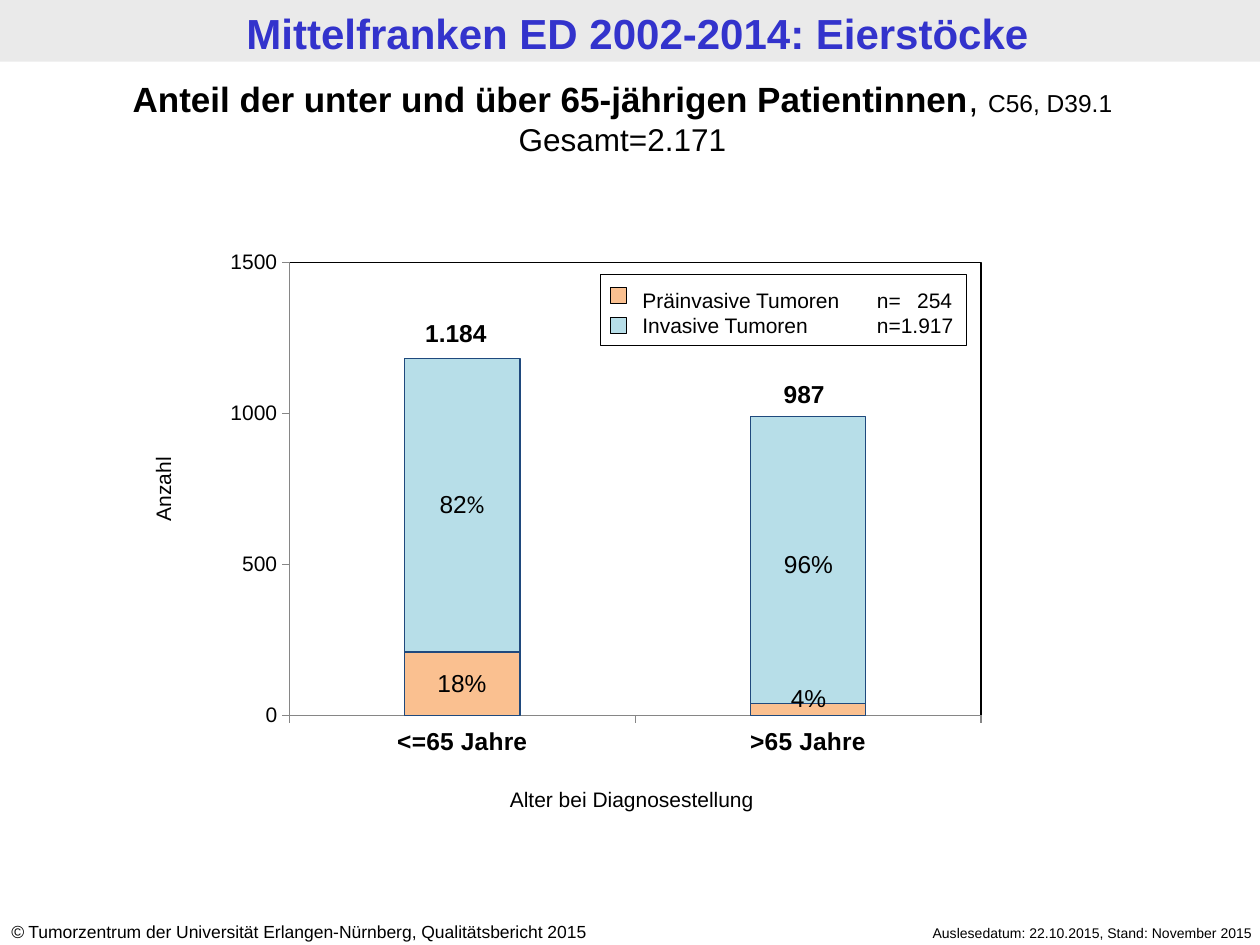
from lxml.etree import SubElement
from pptx import Presentation
from pptx.chart.data import CategoryChartData
from pptx.dml.color import RGBColor
from pptx.enum.chart import XL_CHART_TYPE as ChartType, XL_TICK_MARK as Tick
from pptx.enum.shapes import MSO_SHAPE as Shape
from pptx.enum.text import PP_ALIGN as Align
from pptx.oxml import parse_xml
from pptx.oxml.ns import nsdecls, qn
from pptx.util import Pt

# Content
BLACK, BAND, TITLE_BLUE = "000000", "EAEAEA", "3333CC"
OUTLINE, AXIS_GREY = "1F497D", "868686"
AGE_GROUPS = ["<=65 Jahre", ">65 Jahre"]
TUMORS = [  # name, cases per age group, colour, legend count
    ("Präinvasive Tumoren", (210, 40), "FAC090", "254"),
    ("Invasive Tumoren", (970, 950), "B7DEE8", "1.917"),
]
TITLE = "Mittelfranken ED 2002-2014: Eierstöcke"
SUBTITLE = [
    [("Anteil der unter und über 65-jährigen Patientinnen", {"size": Pt(20), "bold": True}),
     (", ", {"size": Pt(20)}), ("C56, D39.1", {"size": Pt(14)})],
    [("Gesamt=2.171", {"size": Pt(18)})],
]
COPYRIGHT = [[("©", {"italic": True}),
              (" Tumorzentrum der Universität Erlangen-Nürnberg, Qualitätsbericht 2015", {})]]
DATES = "Auslesedatum: 22.10.2015, Stand: November 2015"
TOTALS = [("1.184", (224, 178, 73, 24)), ("987", (423, 213, 73, 24))]
SHARES = [
    ([[("82", {}), ("%", {"name": "Calibri"})]], (230, 276, 68, 24)),
    ("18%", (230, 378, 68, 24)),
    ("96%", (428, 310, 68, 24)),
    ("4%", (428, 387, 68, 24)),
]
AXIS_TITLES = [("Alter bei Diagnosestellung", (241, 446, 240, 22), 0),
               ("Anzahl", (-0.7, 268.5, 188, 22), 270)]
CHART_BOX = (108.7, 102.2, 502.6, 335.5)
PLOT = {"x": 0.113, "y": 0.142, "w": 0.786, "h": 0.772}
LEGEND_BOX = (343, 156.8, 209.5, 40.5)
LEGEND_TABS = [(134, "l"), (177, "r")]

prs = Presentation()
prs.slide_width, prs.slide_height = Pt(720), Pt(540)
slide = prs.slides.add_slide(prs.slide_layouts[6])


def rgb(color):
    return RGBColor.from_string(color)


def add_text(content, box, size=14, align=Align.CENTER, bold=False, color=BLACK,
             rotation=0, tabs=()):
    """Content is one string or a list of paragraphs made of (text, font settings)."""
    textbox = slide.shapes.add_textbox(*map(Pt, box))
    textbox.rotation = rotation
    frame = textbox.text_frame
    frame.word_wrap = True
    paragraphs = [[(content, {})]] if isinstance(content, str) else content
    for index, runs in enumerate(paragraphs):
        para = frame.add_paragraph() if index else frame.paragraphs[0]
        para.alignment = align
        if tabs:
            tab_list = SubElement(para._p.get_or_add_pPr(), qn("a:tabLst"))
            for position, side in tabs:
                SubElement(tab_list, qn("a:tab"), pos=str(Pt(position)), algn=side)
        font = para.font
        font.name, font.size, font.bold = "Arial", Pt(size), bold
        font.color.rgb = rgb(color)
        for text, settings in runs:
            run = para.add_run()
            run.text = text
            # Runs carry the paragraph's font plus their own settings
            merged = {"name": "Arial", "size": Pt(size), "bold": bold, **settings}
            for key, value in merged.items():
                setattr(run.font, key, value)
            run.font.color.rgb = rgb(color)


def add_rect(box, fill=None, line=None):
    rect = slide.shapes.add_shape(Shape.RECTANGLE, *map(Pt, box))
    rect.shadow.inherit = False
    if fill:
        rect.fill.solid()
        rect.fill.fore_color.rgb = rgb(fill)
    else:
        rect.fill.background()
    if line:
        rect.line.color.rgb = rgb(line)
        rect.line.width = Pt(0.75)
    else:
        rect.line.fill.background()


# Title band and footer
add_rect((0, 0, 720, 35.3), fill=BAND)
add_text(TITLE, (4.3, 0.7, 720, 35.3), size=24, bold=True, color=TITLE_BLUE)
add_text(DATES, (478.8, 525, 244, 17), size=8, align=Align.RIGHT)
add_text(COPYRIGHT, (-0.7, 522.7, 377, 19.4), size=10, align=Align.LEFT)

# Stacked columns
data = CategoryChartData()
data.categories = AGE_GROUPS
for name, cases, _, _ in TUMORS:
    data.add_series(name, cases)
chart = slide.shapes.add_chart(ChartType.COLUMN_STACKED, *map(Pt, CHART_BOX), data).chart
chart.has_legend = chart.has_title = False
chart.font.name, chart.font.size = "Calibri", Pt(18)
chart.font.color.rgb = rgb(BLACK)
columns = chart.plots[0]
columns.gap_width, columns.overlap, columns.vary_by_categories = 200, 100, False
for series, (_, _, color, _) in zip(columns.series, TUMORS):
    series.format.fill.solid()
    series.format.fill.fore_color.rgb = rgb(color)
    series.format.line.color.rgb = rgb(OUTLINE)
    series.format.line.width = Pt(0.75)

# Axes
counts, ages = chart.value_axis, chart.category_axis
counts.minimum_scale, counts.maximum_scale, counts.major_unit = 0, 1500, 500
for axis, size, bold in ((counts, 12, False), (ages, 14, True)):
    axis.has_major_gridlines = False
    axis.major_tick_mark, axis.minor_tick_mark = Tick.OUTSIDE, Tick.NONE
    axis.format.line.color.rgb = rgb(AXIS_GREY)
    axis.format.line.width = Pt(0.75)
    font = axis.tick_labels.font
    font.name, font.size, font.bold = "Arial", Pt(size), bold
    font.color.rgb = rgb(BLACK)

# Plot area: fixed place and black frame
plot_area = chart._chartSpace.chart.plotArea
for old_layout in plot_area.findall(qn("c:layout")):
    plot_area.remove(old_layout)
layout = parse_xml(f"<c:layout {nsdecls('c')}><c:manualLayout/></c:layout>")
settings = {"layoutTarget": "inner", "xMode": "edge", "yMode": "edge", **PLOT}
for key, value in settings.items():
    SubElement(layout[0], qn(f"c:{key}"), val=str(value))
plot_area.insert(0, layout)
plot_area.append(parse_xml(
    f'<c:spPr {nsdecls("c", "a")}><a:noFill/><a:ln w="{Pt(0.75)}"><a:solidFill>'
    f'<a:srgbClr val="{BLACK}"/></a:solidFill></a:ln></c:spPr>'))

# Heading and labels over the chart
add_text(SUBTITLE, (0, 41, 711.4, 53.3))
for total, box in TOTALS:
    add_text(total, box, bold=True)
for share, box in SHARES:
    add_text(share, box)
for axis_title, box, rotation in AXIS_TITLES:
    add_text(axis_title, box, size=12, rotation=rotation)

# Legend
legend_rows = [[(f"{name}\tn=\t{count}", {})] for name, _, _, count in TUMORS]
add_text(legend_rows, (360, 160.5, 193, 36), size=12, align=Align.LEFT, tabs=LEGEND_TABS)
add_rect(LEGEND_BOX, line=BLACK)
for row, (_, _, color, _) in enumerate(TUMORS):
    add_rect((348.7, 164.2 + row * 17.2, 9.2, 9.2), fill=color, line=BLACK)

prs.save("out.pptx")
